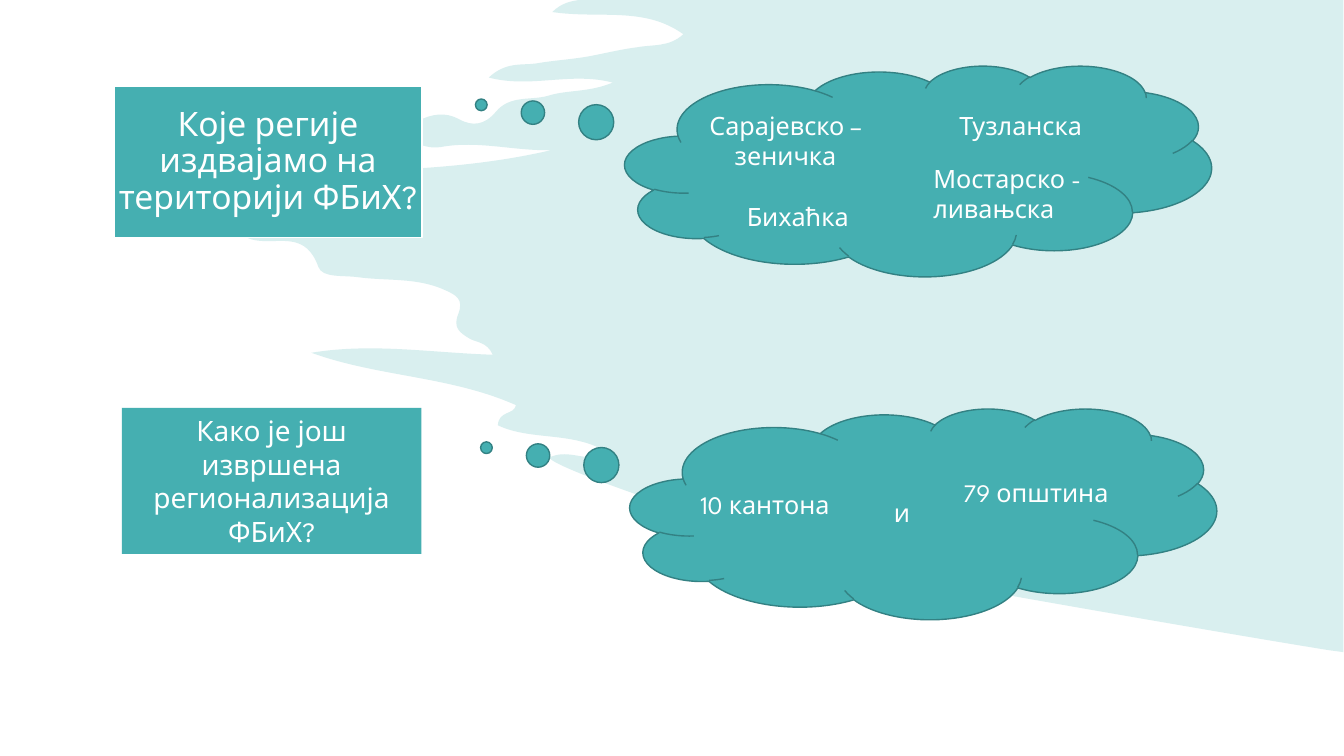
import lxml.etree
import pptx
import pptx.dml.color
import pptx.enum.shapes
import pptx.enum.text
import pptx.oxml.ns
import pptx.util
from pptx.util import Cm

TEAL = pptx.dml.color.RGBColor(0x45, 0xAF, 0xB1)
DARK_TEAL = pptx.dml.color.RGBColor(0x33, 0x81, 0x83)
WHITE = pptx.dml.color.RGBColor(0xFF, 0xFF, 0xFF)
FONT = "League Spartan"
SHAPES = pptx.enum.shapes.MSO_SHAPE
CENTER = pptx.enum.text.PP_ALIGN.CENTER
LEFT = pptx.enum.text.PP_ALIGN.LEFT
qn = pptx.oxml.ns.qn


def add_filled_shape(kind, left, top, width, height, line_color):
    shape = slide.shapes.add_shape(kind, Cm(left), Cm(top), Cm(width), Cm(height))
    shape.shadow.inherit = False
    shape.fill.solid()
    shape.fill.fore_color.rgb = TEAL
    if line_color is None:
        shape.line.fill.background()
    else:
        shape.line.color.rgb = line_color
        shape.line.width = pptx.util.Pt(1)
    return shape


def write_text(paragraph, text, size, alignment):
    paragraph.alignment = alignment
    run = paragraph.add_run()
    run.text = text
    run.font.name = FONT
    run.font.size = pptx.util.Pt(size)
    run.font.color.rgb = WHITE


presentation = pptx.Presentation()
presentation.slide_width = Cm(33.87)
presentation.slide_height = Cm(19.05)
slide = presentation.slides.add_slide(presentation.slide_layouts[6])
slide.background.fill.solid()
slide.background.fill.fore_color.rgb = WHITE

splash_left = 193
splash_curves = [
    (567, 1, 557, 3, 548, 12), (595, 19, 639, 6, 678, 34),
    (664, 47, 648, 44, 632, 47), (616, 49, 600, 53, 584, 56),
    (567, 59, 549, 60, 532, 63), (518, 65, 502, 61, 485, 77),
    (527, 88, 566, 71, 608, 82), (584, 92, 563, 89, 544, 95),
    (527, 100, 506, 94, 492, 111), (481, 124, 469, 126, 455, 118),
    (442, 111, 428, 113, 415, 120), (411, 123, 406, 126, 406, 132),
    (406, 141, 412, 143, 418, 144), (424, 146, 431, 147, 437, 146),
    (474, 139, 510, 150, 547, 149), (431, 176, 314, 167, splash_left, 176),
    (209, 195, 229, 179, 241, 193), (230, 222, 234, 237, 258, 239),
    (280, 241, 304, 231, 316, 265), (320, 276, 341, 273, 355, 275),
    (384, 279, 414, 275, 442, 288), (453, 293, 460, 297, 455, 311),
    (449, 325, 456, 330, 466, 336), (473, 340, 483, 339, 489, 352),
    (428, 350, 369, 340, 309, 350), (375, 374, 447, 373, 512, 402),
    (510, 412, 495, 407, 494, 422), (528, 438, 569, 427, 605, 450),
    (584, 461, 565, 444, 545, 454), (552, 469, 840, 561, 892, 571),
    (978, 587, 1195, 625, 1318, 645),
]
splash_ends = [curve[4:] for curve in splash_curves]
builder = slide.shapes.build_freeform(1333, 0, scale=Cm(2.54) / 100)
builder.add_line_segments([(575, 0), *splash_ends, (1333, 647)], close=True)
splash = builder.convert_to_shape()
splash.shadow.inherit = False
splash.fill.solid()
splash.fill.fore_color.rgb = TEAL
splash.line.fill.background()
splash_properties = splash.element.spPr
fill_color = splash_properties.find(qn("a:solidFill")).find(qn("a:srgbClr"))
lxml.etree.SubElement(fill_color, qn("a:alpha"), val="20000")
segments = list(splash_properties.iter(qn("a:lnTo")))[1:]
for segment, curve in zip(segments, splash_curves):
    bezier = lxml.etree.Element(qn("a:cubicBezTo"))
    for x, y in zip(curve[::2], curve[1::2]):
        lxml.etree.SubElement(bezier, qn("a:pt"), x=str(x - splash_left), y=str(y))
    segment.getparent().replace(segment, bezier)

for left, top in [(15.75, 1.65), (15.88, 10.29)]:
    cloud = add_filled_shape(SHAPES.CLOUD_CALLOUT, left, top, 14.78, 5.31, DARK_TEAL)
    cloud.adjustments[0] = -0.745
    cloud.adjustments[1] = -0.313

questions = [
    ("Које регије издвајамо на територији ФБиХ?", 24, 2.87, 2.18, 7.77, 3.81, WHITE, 0.05, 0.05, 0.9),
    ("Како је још извршена регионализација ФБиХ?", 20, 3.07, 10.28, 7.55, 3.68, None, 0.25, 0.13, 1.0),
]
for text, size, left, top, width, height, line_color, side, edge, spacing in questions:
    question = add_filled_shape(SHAPES.RECTANGLE, left, top, width, height, line_color)
    frame = question.text_frame
    frame.word_wrap = True
    frame.vertical_anchor = pptx.enum.text.MSO_ANCHOR.MIDDLE
    frame.margin_left = frame.margin_right = Cm(side)
    frame.margin_top = frame.margin_bottom = Cm(edge)
    frame.paragraphs[0].line_spacing = spacing
    write_text(frame.paragraphs[0], text, size, CENTER)

answers = [
    (["Сарајевско –", "зеничка"], 17.63, 2.66, 5.03, 1.8, False),
    (["Тузланска"], 23.93, 2.66, 4.27, 1.02, True),
    (["Мостарско - ливањска"], 23.27, 3.98, 4.5, 1.8, True),
    (["Бихаћка"], 18.57, 4.95, 3.84, 1.02, True),
    (["10 кантона"], 17.4, 12.21, 5.0, 1.02, True),
    (["и"], 22.28, 12.4, 0.74, 1.02, True),
    (["79 општина"], 24.03, 11.91, 5.61, 1.02, True),
]
for lines, left, top, width, height, wraps in answers:
    answer = slide.shapes.add_textbox(Cm(left), Cm(top), Cm(width), Cm(height))
    frame = answer.text_frame
    frame.word_wrap = wraps
    frame.auto_size = pptx.enum.text.MSO_AUTO_SIZE.SHAPE_TO_FIT_TEXT
    for index, line in enumerate(lines):
        paragraph = frame.add_paragraph() if index else frame.paragraphs[0]
        write_text(paragraph, line, 18, CENTER if index else LEFT)

presentation.save("out.pptx")
